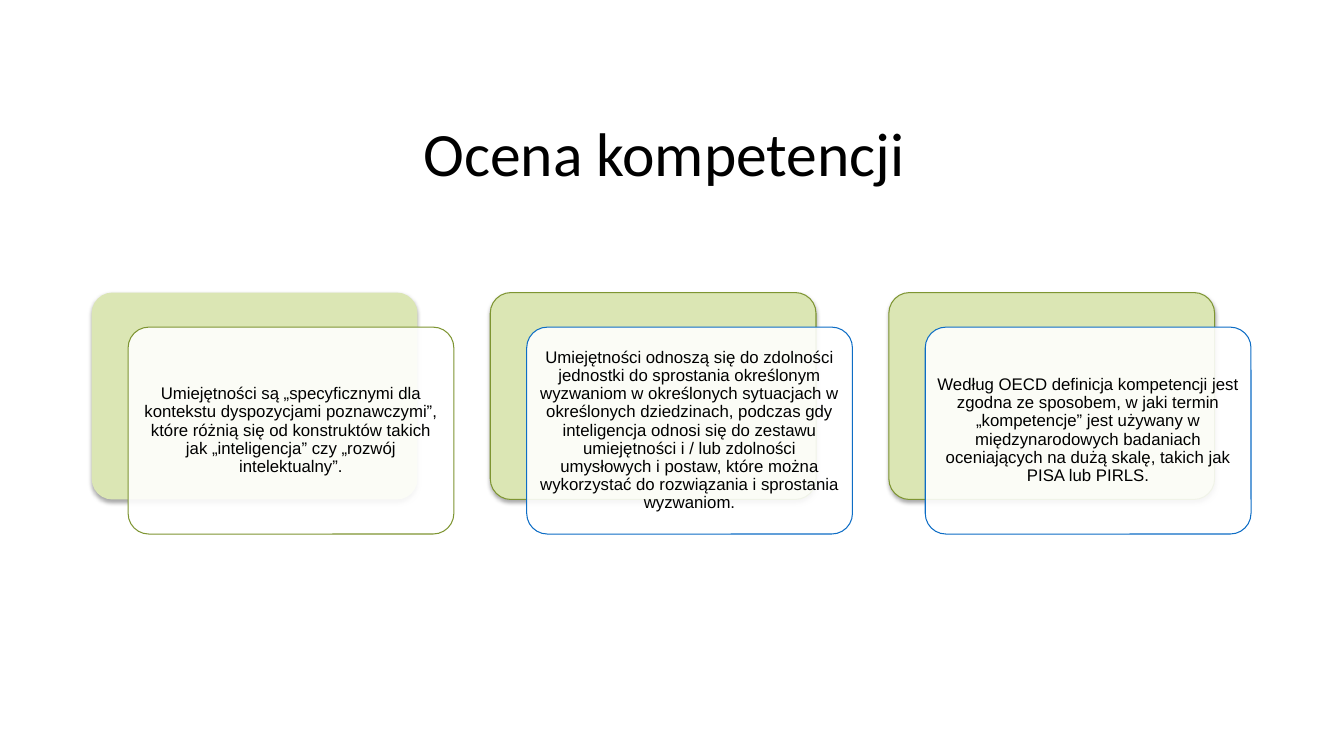
from lxml.etree import SubElement
from pptx import Presentation
from pptx.dml.color import RGBColor
from pptx.enum.shapes import MSO_SHAPE as Shape
from pptx.enum.text import MSO_ANCHOR as Anchor, PP_ALIGN as Align
from pptx.oxml.ns import qn
from pptx.util import Pt

TITLE = "Ocena kompetencji "
COLORS = {"black": "000000", "white": "FFFFFF", "lime": "DBE6B4",
          "olive": "7E9532", "blue": "0D6DC5"}
# Text, outline of the back plate, outline of the front card
CARDS = [
    ("Umiejętności są „specyficznymi dla kontekstu dyspozycjami poznawczymi”, "
     "które różnią się od konstruktów takich jak „inteligencja” czy „rozwój "
     "intelektualny”.", None, "olive"),
    ("Umiejętności odnoszą się do zdolności jednostki do sprostania określonym "
     "wyzwaniom w określonych sytuacjach w określonych dziedzinach, podczas gdy "
     "inteligencja odnosi się do zestawu umiejętności i / lub zdolności umysłowych "
     "i postaw, które można wykorzystać do rozwiązania i sprostania wyzwaniom.",
     "olive", "blue"),
    ("Według OECD definicja kompetencji jest zgodna ze sposobem, w jaki termin "
     "„kompetencje” jest używany w międzynarodowych badaniach oceniających na dużą "
     "skalę, takich jak PISA lub PIRLS.", "olive", "blue"),
]
LEFT, TOP, PITCH = 65.5, 209, 284.7
WIDTH, HEIGHT = 232.7, 147.8
SHIFT_X, SHIFT_Y = 26, 24.7


def color(name):
    return RGBColor.from_string(COLORS[name])


def write(shape, text, font_name, size, inset_x, inset_y):
    frame = shape.text_frame
    frame.word_wrap = True
    frame.vertical_anchor = Anchor.MIDDLE
    frame.margin_left = frame.margin_right = Pt(inset_x)
    frame.margin_top = frame.margin_bottom = Pt(inset_y)
    paragraph = frame.paragraphs[0]
    paragraph.text = text
    paragraph.alignment = Align.CENTER
    paragraph.line_spacing = 0.9
    paragraph.font.name = font_name
    paragraph.font.size = Pt(size)
    paragraph.font.color.rgb = color("black")


def add_plate(slide, left, top, fill, outline):
    shape = slide.shapes.add_shape(
        Shape.ROUNDED_RECTANGLE, Pt(left), Pt(top), Pt(WIDTH), Pt(HEIGHT))
    shape.adjustments[0] = 0.1
    shape.fill.solid()
    shape.fill.fore_color.rgb = color(fill)
    if outline:
        shape.line.color.rgb = color(outline)
        shape.line.width = Pt(0.75)
    else:
        shape.line.fill.background()
    shape.shadow.inherit = False
    return shape


def set_alpha(color_element, percent):
    SubElement(color_element, qn("a:alpha"), val=str(percent * 1000))


def add_soft_shadow(shape):
    effects = shape._element.spPr.find(qn("a:effectLst"))
    shadow = SubElement(effects, qn("a:outerShdw"), blurRad=str(Pt(3.1)),
                        dist=str(Pt(1.8)), dir="5400000", rotWithShape="0")
    set_alpha(SubElement(shadow, qn("a:srgbClr"), val=COLORS["black"]), 35)


def main():
    presentation = Presentation()
    presentation.slide_width, presentation.slide_height = Pt(960), Pt(540)
    slide = presentation.slides.add_slide(presentation.slide_layouts[6])

    title = slide.shapes.add_textbox(Pt(65.5), Pt(65.5), Pt(828), Pt(93))
    write(title, TITLE, "Calibri", 44, 7.2, 3.6)

    for index, (text, back_outline, front_outline) in enumerate(CARDS):
        left = LEFT + index * PITCH
        add_soft_shadow(add_plate(slide, left, TOP, "lime", back_outline))
        card = add_plate(slide, left + SHIFT_X, TOP + SHIFT_Y, "white", front_outline)
        set_alpha(card._element.spPr.find(qn("a:solidFill"))[0], 89)
        write(card, text, "Arial", 12, 4.3, 4.3)

    presentation.save("out.pptx")


if __name__ == "__main__":
    main()
